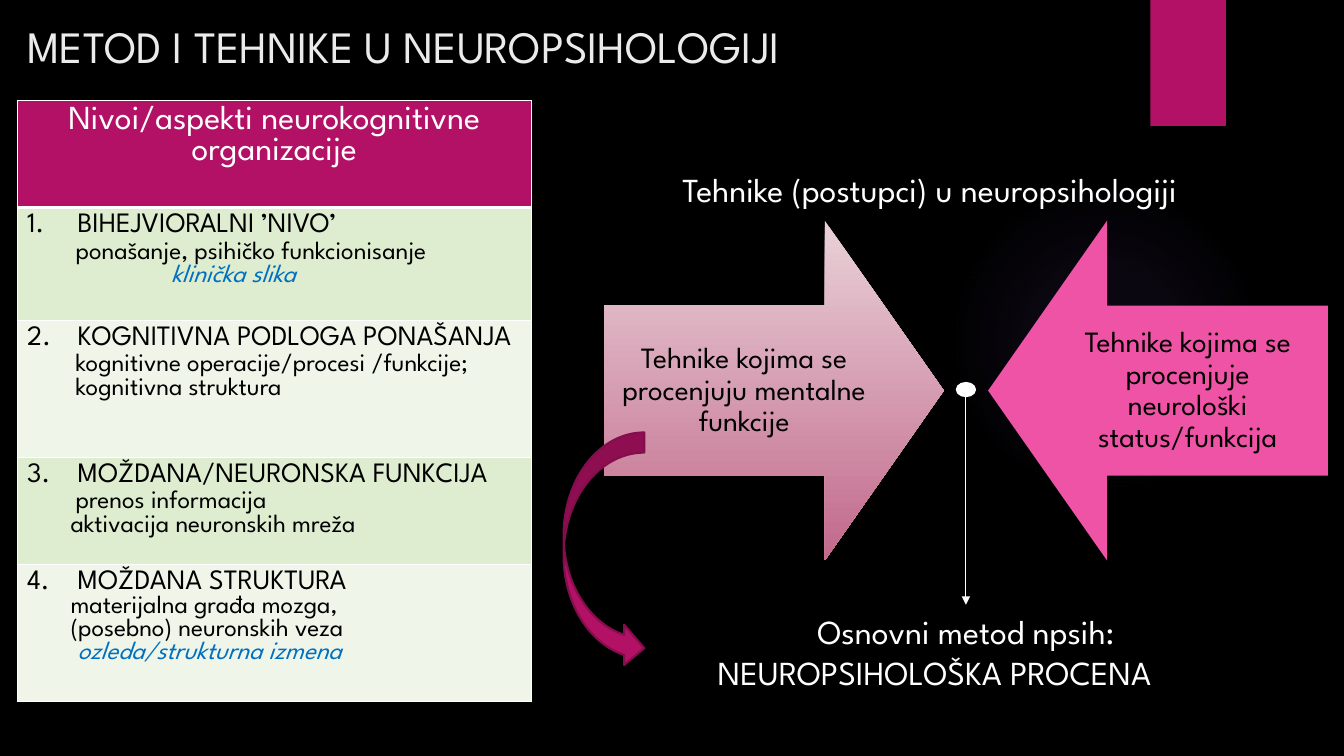
from dataclasses import dataclass

from lxml import etree
from pptx import Presentation
from pptx import util as u
from pptx.dml.color import RGBColor
from pptx.enum import shapes, text
from pptx.oxml import ns

FONT = "League Spartan"
BLACK = RGBColor(0x00, 0x00, 0x00)
WHITE = RGBColor(0xFF, 0xFF, 0xFF)
TITLE_GREY = RGBColor(0xEB, 0xEB, 0xEB)
MAGENTA = RGBColor(0xB3, 0x11, 0x66)
DARK_MAGENTA = RGBColor(0x84, 0x0D, 0x4B)
PINK = RGBColor(0xEF, 0x53, 0xA5)
PALE_ROSE = RGBColor(0xE9, 0xD1, 0xD8)
ROSE = RGBColor(0xC2, 0x69, 0x8B)
VIOLET = RGBColor(0x9B, 0x6B, 0xF2)
BLUE = RGBColor(0x00, 0x70, 0xC0)
GREEN = RGBColor(0xDE, 0xED, 0xD0)
PALE_GREEN = RGBColor(0xEF, 0xF6, 0xE9)

LEFT, CENTER = text.PP_ALIGN.LEFT, text.PP_ALIGN.CENTER
TOP, MIDDLE = text.MSO_ANCHOR.TOP, text.MSO_ANCHOR.MIDDLE
Shape = shapes.MSO_SHAPE


@dataclass
class Detail:
    words: str
    indent: float
    before: float = 0
    color: RGBColor = BLACK


@dataclass
class Level:
    name: str
    height: float
    details: list[Detail]


@dataclass
class Technique:
    words: str
    arrow_left: float
    text_left: float
    rotation: int


@dataclass
class Label:
    lines: list[tuple[str, text.PP_ALIGN]]
    box: tuple[float, float, float, float]
    size: float
    pitch: float
    color: RGBColor = WHITE
    anchor: text.MSO_ANCHOR = TOP
    inset: float | None = None


LEVELS = [
    Level("BIHEJVIORALNI ’NIVO’", 1.12, [
        Detail("ponašanje, psihičko funkcionisanje", 0.48, 2),
        Detail("klinička slika", 1.43, color=BLUE)]),
    Level("KOGNITIVNA PODLOGA PONAŠANJA", 1.36, [
        Detail("kognitivne operacije/procesi /funkcije; kognitivna struktura", 0.48, 2)]),
    Level("MOŽDANA/NEURONSKA FUNKCIJA", 1.04, [
        Detail("prenos informacija", 0.48, 2),
        Detail("aktivacija neuronskih mreža", 0.43)]),
    Level("MOŽDANA STRUKTURA", 1.36, [
        Detail("materijalna građa mozga,", 0.43),
        Detail("(posebno) neuronskih veza", 0.43),
        Detail("ozleda/strukturna izmena", 0.5, color=BLUE)]),
]
HEADER_HEIGHT = 1.06
TECHNIQUES = [
    Technique("Tehnike kojima se procenjuju mentalne funkcije", 5.99, 5.99, 270),
    Technique("Tehnike kojima se procenjuje neurološki status/funkcija", 9.8, 10.39, 90),
]
TITLE = Label([("METOD I TEHNIKE U NEUROPSIHOLOGIJI", LEFT)],
              (0.17, 0.13, 10.29, 0.71), 32, 39, TITLE_GREY)
TECHNIQUES_HEADING = Label([("Tehnike (postupci) u neuropsihologiji", LEFT)],
                           (6.67, 1.62, 6.1, 0.5), 24, 29.3)
METHOD = Label([("Osnovni metod npsih:", CENTER), ("NEUROPSIHOLOŠKA PROCENA", LEFT)],
               (7.02, 6, 5.12, 0.91), 24, 29.3)


def add_element(parent, tag: str, **attributes):
    return etree.SubElement(parent, ns.qn(tag), attributes)


def add_run(paragraph, words: str, size: float, color: RGBColor, italic: bool = False) -> None:
    run = paragraph.add_run()
    run.text = words
    run.font.name, run.font.size = FONT, u.Pt(size)
    run.font.color.rgb = color
    run.font.italic = italic


def add_label(slide, label: Label):
    shape = slide.shapes.add_textbox(*map(u.Inches, label.box))
    frame = shape.text_frame
    frame.word_wrap = True
    frame.vertical_anchor = label.anchor
    if label.inset is not None:
        frame.margin_left = frame.margin_right = u.Inches(label.inset)
        frame.margin_top = frame.margin_bottom = u.Inches(label.inset)
    for index, (words, alignment) in enumerate(label.lines):
        paragraph = frame.add_paragraph() if index else frame.paragraphs[0]
        paragraph.alignment = alignment
        paragraph.line_spacing = u.Pt(label.pitch)
        add_run(paragraph, words, label.size, label.color)
    return shape


def add_figure(slide, kind, box, fill: RGBColor | None = None, line: RGBColor | None = None):
    shape = slide.shapes.add_shape(kind, *map(u.Inches, box))
    shape.shadow.inherit = False
    if fill is not None:
        shape.fill.solid()
        shape.fill.fore_color.rgb = fill
    if line is None:
        shape.line.fill.background()
    else:
        shape.line.color.rgb = line
        shape.line.width = u.Pt(1.5)
    return shape


def set_gradient(shape, stops: list[tuple[int, RGBColor, int]], radial: bool = False) -> None:
    """Fill with stops of (position %, colour, opacity %)."""
    gradient = etree.Element(ns.qn("a:gradFill"), rotWithShape="0")
    stop_list = add_element(gradient, "a:gsLst")
    for position, color, opacity in stops:
        stop = add_element(stop_list, "a:gs", pos=str(position * 1000))
        value = add_element(stop, "a:srgbClr", val=str(color))
        add_element(value, "a:alpha", val=str(opacity * 1000))
    if radial:
        path = add_element(gradient, "a:path", path="circle")
        add_element(path, "a:fillToRect", l="50000", t="50000", r="50000", b="50000")
    else:
        add_element(gradient, "a:lin", ang="5400000", scaled="0")
    shape._element.spPr.find(ns.qn("a:prstGeom")).addnext(gradient)


def style_cell(cell, fill: RGBColor, top: float = 1, bottom: float = 1) -> None:
    properties = cell._tc.get_or_add_tcPr()
    for side, width in (("L", 1), ("R", 1), ("T", top), ("B", bottom)):
        border = add_element(properties, f"a:ln{side}", w=str(u.Pt(width)))
        solid = add_element(border, "a:solidFill")
        add_element(solid, "a:srgbClr", val=str(WHITE))
    cell.fill.solid()
    cell.fill.fore_color.rgb = fill


def indent(paragraph, left: float, first: float = 0):
    properties = paragraph._p.get_or_add_pPr()
    properties.set("marL", str(u.Inches(left)))
    properties.set("indent", str(u.Inches(first)))
    return properties


def add_level_table(slide) -> None:
    heights = [HEADER_HEIGHT] + [level.height for level in LEVELS]
    table = slide.shapes.add_table(len(heights), 1, u.Inches(0.17), u.Inches(1),
                                   u.Inches(5.1), u.Inches(sum(heights))).table
    for row, height in zip(table.rows, heights):
        row.height = u.Inches(height)
    header = table.cell(0, 0)
    style_cell(header, MAGENTA, bottom=3)
    title = header.text_frame.paragraphs[0]
    title.alignment = CENTER
    add_run(title, "Nivoi/aspekti neurokognitivne organizacije", 24, WHITE)
    for number, level in enumerate(LEVELS, 1):
        cell = table.cell(number, 0)
        style_cell(cell, GREEN if number % 2 else PALE_GREEN, top=3 if number == 1 else 1)
        name = cell.text_frame.paragraphs[0]
        add_element(indent(name, 0.5, -0.5), "a:buAutoNum",
                    type="arabicPeriod", startAt=str(number))
        add_run(name, level.name, 20, BLACK)
        for detail in level.details:
            paragraph = cell.text_frame.add_paragraph()
            indent(paragraph, detail.indent)
            paragraph.space_before = u.Pt(detail.before)
            add_run(paragraph, detail.words, 18, detail.color, detail.color == BLUE)


def add_method_arrow(slide, method) -> None:
    arrow = slide.shapes.add_connector(shapes.MSO_CONNECTOR.STRAIGHT, u.Inches(9.58),
                                       u.Inches(3.93), u.Inches(9.58), u.Inches(6))
    arrow.end_connect(method, 0)
    arrow.line.color.rgb = WHITE
    arrow.line.width = u.Pt(0.75)
    add_element(arrow.line._get_or_add_ln(), "a:tailEnd", type="triangle")
    add_element(arrow._element.spPr, "a:effectLst")


def main() -> None:
    presentation = Presentation()
    presentation.slide_width, presentation.slide_height = u.Inches(13.33), u.Inches(7.5)
    slide = presentation.slides.add_slide(presentation.slide_layouts[6])
    slide.background.fill.solid()
    slide.background.fill.fore_color.rgb = BLACK

    glow = add_figure(slide, Shape.OVAL, (9.41, 1.83, 3.08, 3.08))
    set_gradient(glow, [(0, VIOLET, 7), (36, VIOLET, 6), (69, VIOLET, 0)], radial=True)
    add_figure(slide, Shape.RECTANGLE, (11.41, 0, 0.75, 1.25), MAGENTA)
    for technique in TECHNIQUES:
        pointing_right = technique.rotation == 270
        arrow = add_figure(slide, Shape.DOWN_ARROW, (technique.arrow_left, 2.19, 3.37, 3.37),
                           None if pointing_right else PINK)
        arrow.rotation = technique.rotation
        arrow.adjustments[0], arrow.adjustments[1] = 0.5, 0.35
        if pointing_right:
            set_gradient(arrow, [(0, PALE_ROSE, 100), (100, ROSE, 100)])
        add_label(slide, Label([(technique.words, CENTER)], (technique.text_left, 3.03, 2.78, 1.68),
                               21, 22.6, BLACK, MIDDLE, 0.16))
    add_label(slide, TECHNIQUES_HEADING)
    method = add_label(slide, METHOD)
    add_figure(slide, Shape.OVAL, (9.49, 3.8, 0.18, 0.13), WHITE, WHITE)
    add_method_arrow(slide, method)
    add_level_table(slide)
    add_label(slide, TITLE)
    add_figure(slide, Shape.CURVED_RIGHT_ARROW, (5.59, 4.29, 0.8, 2.34), MAGENTA, DARK_MAGENTA)
    presentation.save("out.pptx")


if __name__ == "__main__":
    main()
